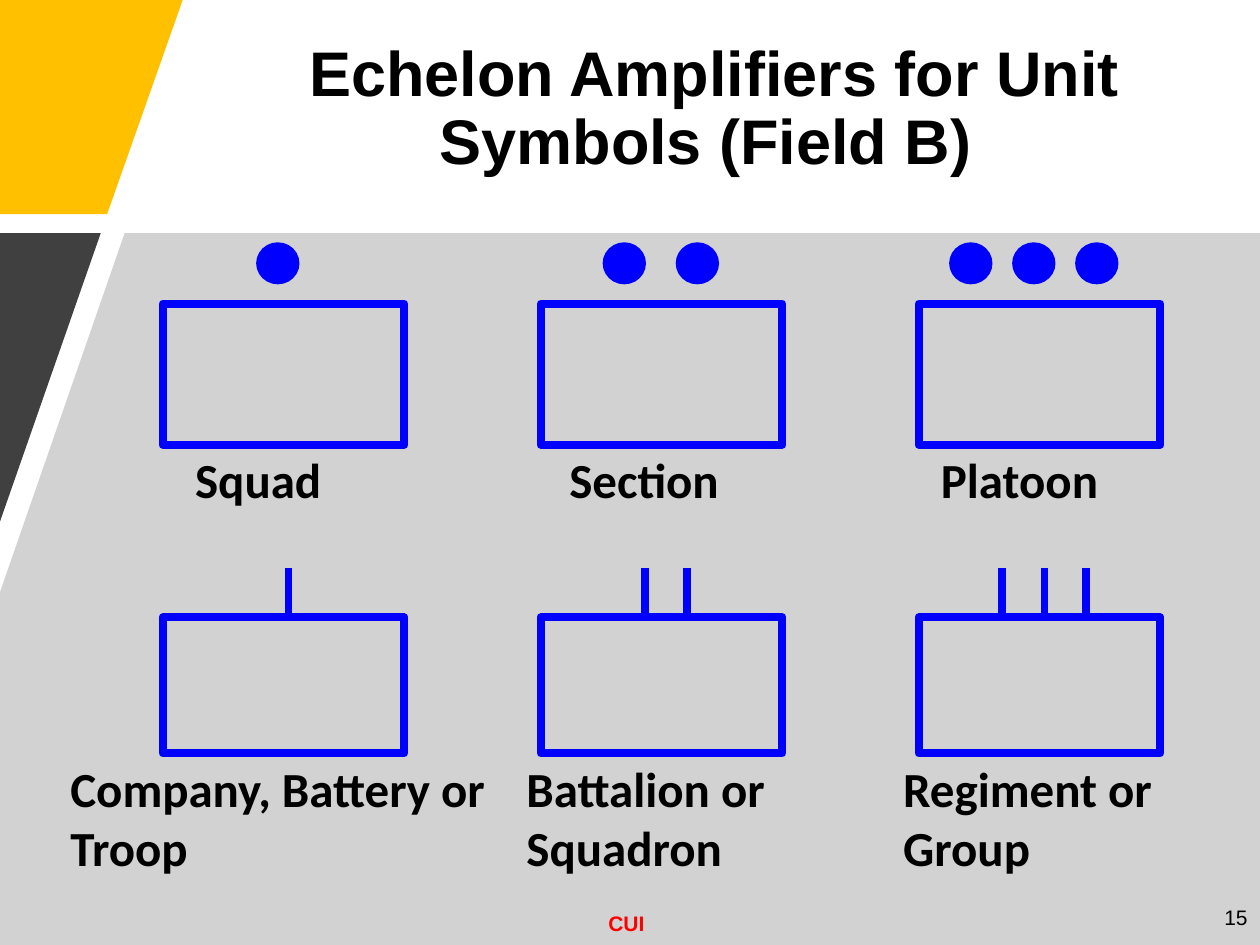
import pptx
import pptx.dml.color
import pptx.enum.shapes
import pptx.enum.text
import pptx.oxml.ns
import pptx.util
from lxml import etree

Inches = pptx.util.Inches
RGBColor = pptx.dml.color.RGBColor
Align = pptx.enum.text.PP_ALIGN
Anchor = pptx.enum.text.MSO_ANCHOR
Shape = pptx.enum.shapes.MSO_SHAPE
qn = pptx.oxml.ns.qn

GOLD = RGBColor(0xFF, 0xC0, 0x00)
GRAY = RGBColor(0xA6, 0xA6, 0xA6)
CHARCOAL = RGBColor(0x40, 0x40, 0x40)
BLUE = RGBColor(0x00, 0x00, 0xFF)
BLACK = RGBColor(0x00, 0x00, 0x00)
RED = RGBColor(0xFF, 0x00, 0x00)

COLUMNS = [1.29, 4.29, 7.29]
FRAME_WIDTH = 1.92
DOT_ROW = [[2.04], [4.79, 5.37], [7.54, 8.04, 8.54]]
BAR_ROW = [[2.29], [5.12, 5.45], [7.95, 8.29, 8.62]]
LABELS = [
    ("Squad", 1.45, 3.52, 1.39, 0.57, False),
    ("Section", 4.42, 3.52, 1.61, 0.57, False),
    ("Platoon", 7.37, 3.52, 1.63, 0.57, False),
    ("Company, Battery or Troop", 0.46, 5.97, 3.58, 1.03, True),
    ("Battalion or\nSquadron", 4.08, 5.97, 2.36, 1.03, False),
    ("Regiment or\nGroup", 7.07, 5.97, 2.47, 1.03, False),
]


def write_text(frame, text, font="Arial", size=12, color=BLACK, bold=True,
               align=Align.LEFT, spacing=None):
    """Fill a text frame with one formatted paragraph per line of text."""
    for index, line in enumerate(text.split("\n")):
        para = frame.add_paragraph() if index else frame.paragraphs[0]
        para.alignment = align
        if spacing:
            para.line_spacing = spacing
        span = para.add_run()
        span.text = line
        span.font.name = font
        span.font.size = pptx.util.Pt(size)
        span.font.bold = bold
        span.font.color.rgb = color


class SlideBuilder:
    """Holds the symbol style and the page being drawn."""

    def __init__(self, page, ink=BLUE, weight=4.5):
        self.page = page
        self.ink = ink
        self.weight = pptx.util.Pt(weight)

    def panel(self, points, color, opacity=None):
        corners = [(Inches(x), Inches(y)) for x, y in points]
        builder = self.page.shapes.build_freeform(*corners[0])
        builder.add_line_segments(corners[1:], close=True)
        shape = builder.convert_to_shape()
        shape.shadow.inherit = False
        shape.fill.solid()
        shape.fill.fore_color.rgb = color
        shape.line.fill.background()
        if opacity:
            tint = shape.fill._xPr.find(qn("a:solidFill"))[0]
            etree.SubElement(tint, qn("a:alpha"), val=str(opacity * 1000))

    def text(self, text, left, top, width, height, wrap=True, grow=False,
             anchor=Anchor.TOP, **style):
        box = self.page.shapes.add_textbox(
            Inches(left), Inches(top), Inches(width), Inches(height))
        frame = box.text_frame
        frame.word_wrap = wrap
        frame.vertical_anchor = anchor
        if grow:
            frame.auto_size = pptx.enum.text.MSO_AUTO_SIZE.SHAPE_TO_FIT_TEXT
        write_text(frame, text, **style)

    def symbol(self, left, top, height):
        group = self.page.shapes.add_group_shape()
        frame = group.shapes.add_shape(
            Shape.RECTANGLE, Inches(left), Inches(top),
            Inches(FRAME_WIDTH), Inches(height))
        frame.shadow.inherit = False
        frame.fill.background()
        frame.line.color.rgb = self.ink
        frame.line.width = self.weight
        return group

    def dot(self, group, left, top):
        dot = group.shapes.add_shape(
            Shape.OVAL, Inches(left), Inches(top), Inches(0.33), Inches(0.32))
        dot.shadow.inherit = False
        dot.fill.solid()
        dot.fill.fore_color.rgb = self.ink
        dot.line.color.rgb = self.ink
        dot.line.width = pptx.util.Pt(1)

    def bar(self, group, x, bottom, top):
        bar = group.shapes.add_connector(
            pptx.enum.shapes.MSO_CONNECTOR.STRAIGHT,
            Inches(x), Inches(bottom), Inches(x), Inches(top))
        bar.line.color.rgb = self.ink
        bar.line.width = self.weight
        etree.SubElement(bar._element.spPr, qn("a:effectLst"))


def main():
    deck = pptx.Presentation()
    deck.slide_width, deck.slide_height = Inches(10), Inches(7.5)
    slide = SlideBuilder(deck.slides.add_slide(deck.slide_layouts[6]))

    slide.panel([(0, 0), (1.45, 0), (0.85, 1.7), (0, 1.7)], GOLD)
    slide.panel([(0.99, 1.85), (10, 1.85), (10, 7.5), (0, 7.5), (0, 4.7)],
                GRAY, opacity=50)
    slide.panel([(0, 1.85), (0.8, 1.85), (0, 4.14)], CHARCOAL)
    slide.text("CUI", 4.73, 7.18, 0.49, 0.3, wrap=False, grow=True, color=RED)
    slide.text("Echelon Amplifiers for Unit Symbols (Field B) ",
               1.34, 0.25, 8.66, 1.25, anchor=Anchor.MIDDLE,
               size=36, align=Align.CENTER, spacing=0.9)

    for left, dots, bars in zip(COLUMNS, DOT_ROW, BAR_ROW):
        group = slide.symbol(left, 2.41, 1.12)
        for x in dots:
            slide.dot(group, x, 1.93)
        group = slide.symbol(left, 4.9, 1.08)
        for x in bars:
            slide.bar(group, x, 4.9, 4.51)

    for label, left, top, width, height, wrap in LABELS:
        slide.text(label, left, top, width, height, wrap=wrap, grow=True,
                   font="Calibri", size=28)
    slide.text("15", 7.75, 7.08, 2.25, 0.4, anchor=Anchor.MIDDLE,
               bold=False, align=Align.RIGHT)

    deck.save("out.pptx")


if __name__ == "__main__":
    main()
